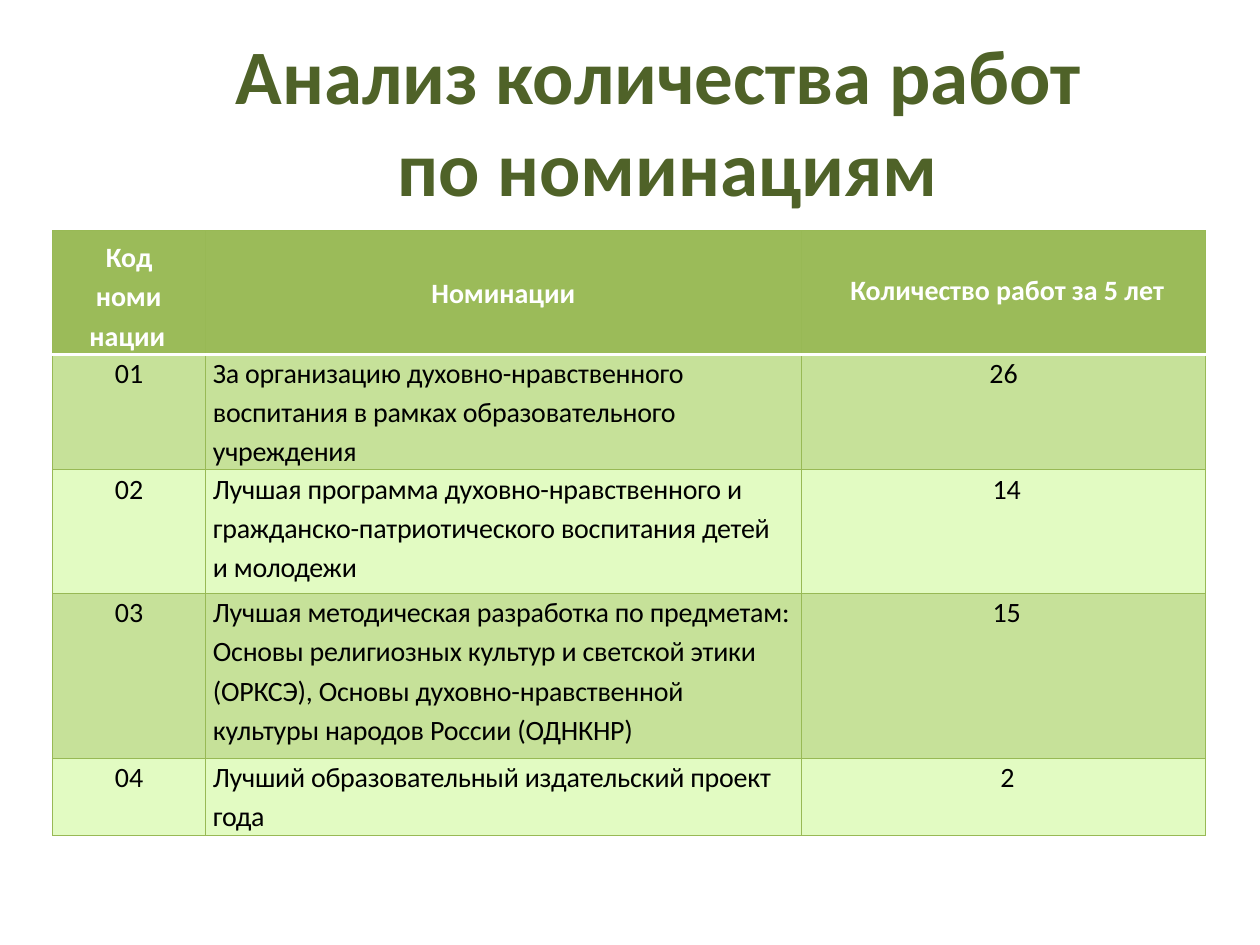
from lxml import etree
from pptx import Presentation
from pptx.dml.color import RGBColor
from pptx.enum.text import MSO_ANCHOR, PP_ALIGN
from pptx.oxml.ns import qn
from pptx.util import Inches, Pt

LEFT, CENTER = PP_ALIGN.LEFT, PP_ALIGN.CENTER
TOP = MSO_ANCHOR.TOP

HEADER_FILL, DARK_ROW, LIGHT_ROW = "9BBB59", "C6E199", "E2FBC2"
BORDER, WHITE, BLACK, TITLE_GREEN = "98B955", "FFFFFF", "000000", "4F6228"


def rgb(value):
    return RGBColor.from_string(value)


class SlideBuilder:
    font_name = "Calibri"

    def __init__(self, slide):
        self.slide = slide

    def style(self, paragraph, size, color, bold, align=CENTER, spacing=0):
        paragraph.alignment = align
        for run in paragraph.runs:
            values = {"name": self.font_name, "size": Pt(size), "bold": bold}
            for name, value in values.items():
                setattr(run.font, name, value)
            run.font.color.rgb = rgb(color)
            if spacing:
                run.font._element.set("spc", str(round(spacing * 100)))

    def indent(self, paragraph, left, first=0):
        properties = paragraph._p.get_or_add_pPr()
        properties.set("marL", str(Inches(left)))
        properties.set("indent", str(Inches(first)))

    def title(self, left, top, width, height, lines):
        box = self.slide.shapes.add_textbox(
            Inches(left), Inches(top), Inches(width), Inches(height))
        frame = box.text_frame
        frame.word_wrap = False
        for i, line in enumerate(lines):
            paragraph = frame.add_paragraph() if i else frame.paragraphs[0]
            paragraph.text = line
            self.style(paragraph, 44, TITLE_GREEN, True)

    def table(self, left, top, widths, heights):
        frame = self.slide.shapes.add_table(
            len(heights), len(widths), Inches(left), Inches(top),
            Inches(sum(widths)), Inches(sum(heights)))
        table = frame.table
        table.first_row = table.horz_banding = False
        for column, width in zip(table.columns, widths):
            column.width = Inches(width)
        for row, height in zip(table.rows, heights):
            row.height = Inches(height)
        return table

    def borders(self, cell, **special):
        properties = cell._tc.get_or_add_tcPr()
        for i, side in enumerate(("lnL", "lnR", "lnT", "lnB")):
            color, width = special.get(side, (BORDER, 0.75))
            line = etree.Element(qn("a:" + side), w=str(Pt(width)))
            fill = etree.SubElement(line, qn("a:solidFill"))
            etree.SubElement(fill, qn("a:srgbClr"), val=color)
            properties.insert(i, line)

    def cell(self, cell, lines, fill, color=BLACK, bold=False, align=CENTER,
             top=0.02, indents=((0, 0),), spacing=0):
        margins = {"margin_left": 0, "margin_right": 0, "margin_bottom": 0,
                   "margin_top": Inches(top), "vertical_anchor": TOP}
        for name, value in margins.items():
            setattr(cell, name, value)
        cell.fill.solid()
        cell.fill.fore_color.rgb = rgb(fill)
        frame = cell.text_frame
        for i, line in enumerate(lines):
            paragraph = frame.add_paragraph() if i else frame.paragraphs[0]
            paragraph.text = line
            if i:
                paragraph.line_spacing = 1.15
            self.indent(paragraph, *indents[min(i, len(indents) - 1)])
            self.style(paragraph, 16, color, bold, align, spacing)


# Header: lines, alignment, top margin, indents
HEADERS = [
    (["Код", "номи нации"], LEFT, 0.08, ((0.35, 0.07), (0.29, 0.05))),
    (["Номинации"], CENTER, 0.37, ((0, 0),)),
    (["Количество работ за 5 лет"], CENTER, 0.34, ((0.06, 0),)),
]
# Nominations: code, description lines, number of works, indent of the number
NOMINATIONS = [
    ("01", ["За организацию духовно-нравственного",
            "воспитания в рамках образовательного\vучреждения"], "26", 0),
    ("02", ["Лучшая программа духовно-нравственного и",
            "гражданско-патриотического воспитания детей",
            "и молодежи"], "14", 0.05),
    ("03", ["Лучшая методическая разработка по предметам:",
            "Основы религиозных культур и светской этики\v"
            "(ОРКСЭ), Основы духовно-нравственной\v"
            "культуры народов России (ОДНКНР)"], "15", 0.05),
    ("04", ["Лучший образовательный издательский проект", "года"], "2", 0.06),
]


def main():
    presentation = Presentation()
    presentation.slide_width, presentation.slide_height = Inches(10), Inches(7.5)
    builder = SlideBuilder(
        presentation.slides.add_slide(presentation.slide_layouts[6]))

    # Table of nominations
    table = builder.table(0.42, 1.83, [1.21, 4.73, 3.21],
                          [0.98, 0.92, 0.98, 1.31, 0.61])
    divider = (WHITE, 2)
    for column, (lines, align, top, indents) in enumerate(HEADERS):
        cell = table.cell(0, column)
        builder.cell(cell, lines, HEADER_FILL, WHITE, True, align, top, indents)
        builder.borders(cell, lnB=divider)

    for row, (code, description, works, shift) in enumerate(NOMINATIONS, 1):
        fill = DARK_ROW if row % 2 else LIGHT_ROW
        code_cell, description_cell, works_cell = table.rows[row].cells
        builder.cell(code_cell, [code], fill)
        builder.cell(description_cell, description, fill, align=LEFT,
                     indents=((0.06, 0),), spacing=-0.1)
        builder.cell(works_cell, [works], fill, indents=((shift, 0),))
        special = {"lnT": divider} if row == 1 else {}
        for cell in (code_cell, description_cell, works_cell):
            builder.borders(cell, **special)

    # Title
    builder.title(1.75, 0.17, 7.1, 1.58,
                  ["Анализ количества работ ", "по номинациям"])

    presentation.save("out.pptx")


if __name__ == "__main__":
    main()
